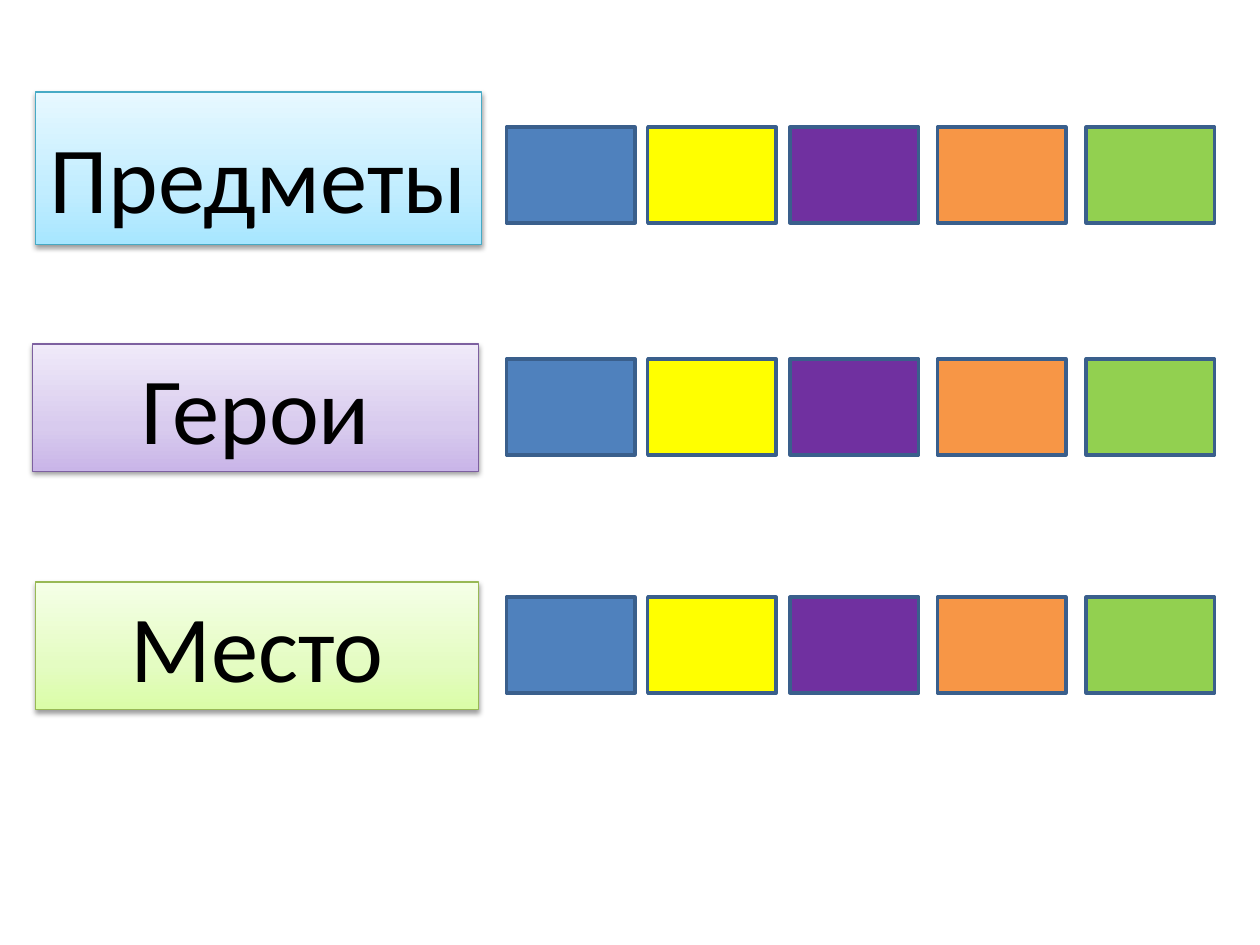
from copy import deepcopy

from lxml import etree
from pptx import Presentation
from pptx.dml.color import RGBColor
from pptx.enum.shapes import MSO_SHAPE
from pptx.enum.text import MSO_ANCHOR, MSO_AUTO_SIZE, PP_ALIGN
from pptx.oxml.ns import qn
from pptx.util import Inches, Pt

RECTANGLE = MSO_SHAPE.RECTANGLE
CENTER = PP_ALIGN.CENTER
TOP = MSO_ANCHOR.TOP
FIT_SHAPE = MSO_AUTO_SIZE.SHAPE_TO_FIT_TEXT

GRADIENT_POSITIONS = (0, 0.35, 1)
CARD_SIZE = (1.02, 0.76)
CARDS = [
    (4.02, "4F81BD"),
    (5.14, "FFFF00"),
    (6.27, "7030A0"),
    (7.44, "F79646"),
    (8.62, "92D050"),
]
# label runs (text, size), label box, gradient from bottom to top, border, top of the cards
CATEGORIES = [
    ([("Предметы", 54), (" ", 66)], (0.28, 0.73, 3.54, 1.21),
     ("A7E6FF", "C1EDFF", "E7F8FF"), "46AAC5", 1.01),
    ([(" Герои ", 54)], (0.26, 2.73, 3.54, 1.01),
     ("C9B5E8", "D8CBEE", "F0EAF9"), "7D60A0", 2.85),
    ([("Место", 54)], (0.28, 4.62, 3.52, 1.01),
     ("DAFDA7", "E4FCC2", "F5FFE7"), "98B955", 4.74),
]


def rgb(hex_color):
    return RGBColor.from_string(hex_color)


class SlideBuilder:
    font = "Calibri"
    text_color = "000000"
    card_border = "3A5F8C"

    def __init__(self, slide):
        self.slide = slide

    def rectangle(self, box, border, border_width):
        shape = self.slide.shapes.add_shape(RECTANGLE, *map(Inches, box))
        shape.shadow.inherit = False
        shape.line.color.rgb = rgb(border)
        shape.line.width = Pt(border_width)
        return shape

    def card(self, left, top, color):
        card = self.rectangle((left, top, *CARD_SIZE), self.card_border, 2)
        card.fill.solid()
        card.fill.fore_color.rgb = rgb(color)

    def label(self, runs, box, gradient, border):
        label = self.rectangle(box, border, 0.75)
        self.fill_gradient(label, gradient)
        self.drop_shadow(label)
        frame = label.text_frame
        frame_format = {"word_wrap": True, "auto_size": FIT_SHAPE, "vertical_anchor": TOP}
        for name, value in frame_format.items():
            setattr(frame, name, value)
        paragraph = frame.paragraphs[0]
        paragraph.alignment = CENTER
        for text, size in runs:
            run = paragraph.add_run()
            run.text = text
            run.font.color.rgb = rgb(self.text_color)
            for name, value in {"name": self.font, "size": Pt(size)}.items():
                setattr(run.font, name, value)

    def fill_gradient(self, shape, colors):
        """Fill with three stops that run from the bottom edge to the top."""
        shape.fill.gradient()
        shape.fill.gradient_angle = 90
        stop_list = shape.element.spPr.find(".//" + qn("a:gsLst"))
        stop_list.append(deepcopy(stop_list[0]))
        for stop, position, color in zip(shape.fill.gradient_stops, GRADIENT_POSITIONS, colors):
            stop.position = position
            stop.color.rgb = rgb(color)

    def drop_shadow(self, shape):
        effects = shape.element.spPr.find(qn("a:effectLst"))
        shadow = etree.SubElement(
            effects, qn("a:outerShdw"), blurRad=str(Pt(3.1)), dist=str(Pt(1.6)),
            dir="5400000", rotWithShape="0")
        color = etree.SubElement(shadow, qn("a:srgbClr"), val="000000")
        etree.SubElement(color, qn("a:alpha"), val="38000")


def main():
    presentation = Presentation()
    presentation.slide_width = Inches(10)
    presentation.slide_height = Inches(7.5)
    builder = SlideBuilder(presentation.slides.add_slide(presentation.slide_layouts[6]))
    for runs, box, gradient, border, cards_top in CATEGORIES:
        builder.label(runs, box, gradient, border)
        for left, color in CARDS:
            builder.card(left, cards_top, color)
    presentation.save("out.pptx")


if __name__ == "__main__":
    main()
